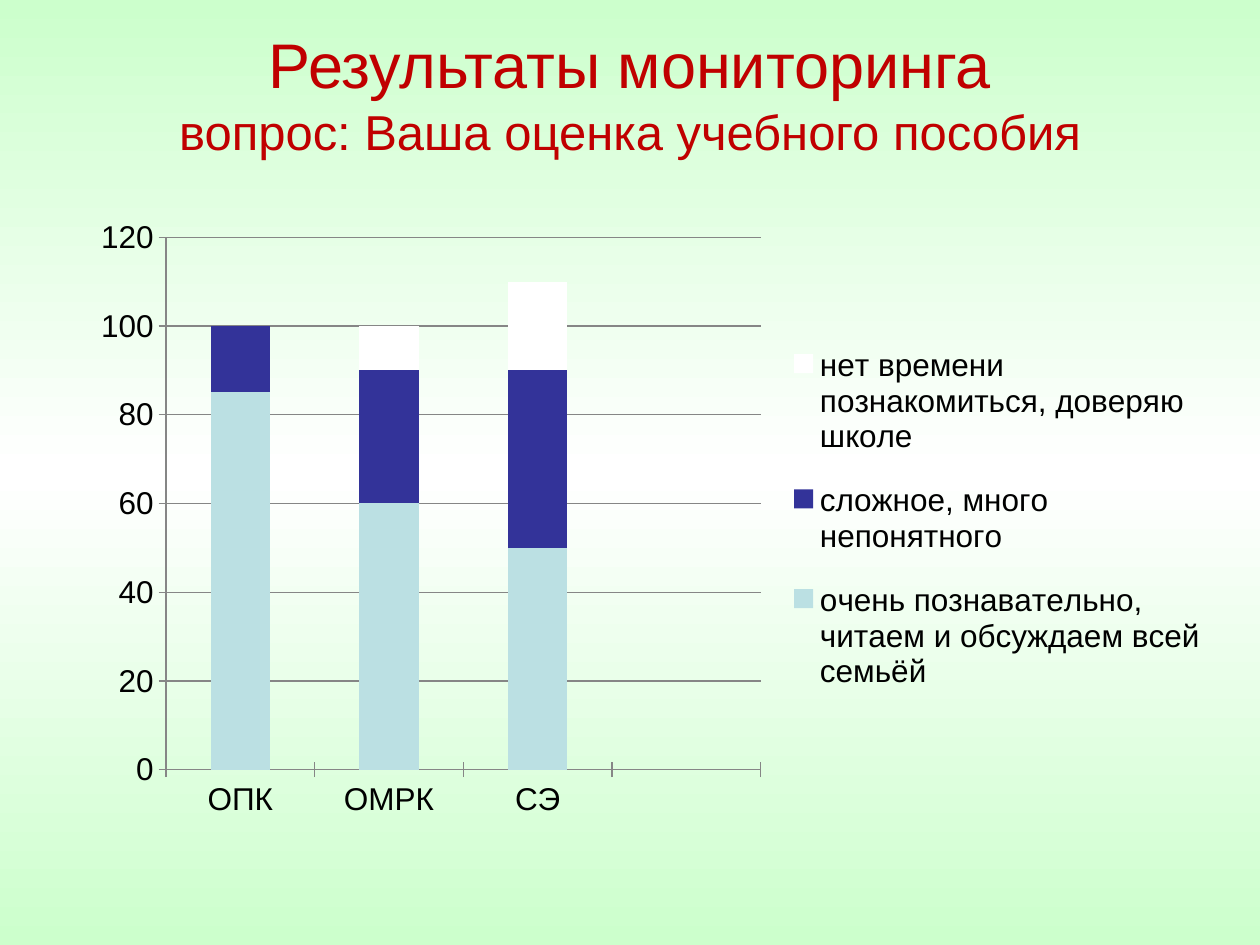
from copy import deepcopy

from lxml.etree import SubElement
from pptx import Presentation
from pptx.chart.data import CategoryChartData
from pptx.dml.color import RGBColor
from pptx.enum.chart import XL_CHART_TYPE, XL_LEGEND_POSITION, XL_TICK_MARK
from pptx.enum.text import MSO_ANCHOR, MSO_AUTO_SIZE, PP_ALIGN
from pptx.oxml.ns import qn
from pptx.util import Inches, Pt

FONT = "Arial"
CATEGORIES = ["ОПК", "ОМРК", "СЭ", ""]
SERIES = [
    ("очень познавательно, читаем и обсуждаем всей семьёй", (85, 60, 50, None), "BBE0E3"),
    ("сложное, много непонятного", (15, 30, 40, None), "333399"),
    ("нет времени познакомиться, доверяю школе", (0, 10, 20, None), "FFFFFF"),
]


def color(value):
    """Turn a hex string into a colour."""
    return RGBColor.from_string(value)


def format_font(font, size, value):
    """Set the typeface, size and colour of a font."""
    font.name = FONT
    font.size = Pt(size)
    font.color.rgb = color(value)


def set_background(slide, edge, middle):
    """Fill the background with a vertical gradient, lighter in the middle."""
    fill = slide.background.fill
    fill.gradient()
    fill.gradient_angle = 270
    first, last = fill.gradient_stops
    for stop, position in ((first, 0), (last, 0.5)):
        stop.position = position
    first.color.rgb = color(edge)
    last.color.rgb = color(middle)
    stops = slide._element.find(".//" + qn("a:gsLst"))
    end_stop = deepcopy(stops[0])
    end_stop.set("pos", "100000")
    stops.append(end_stop)


def set_title(slide, lines):
    """Write the title lines into the placeholder."""
    title = slide.shapes.title
    title.left, title.top = Inches(0.5), Inches(0.3)
    title.width, title.height = Inches(9), Inches(0.87)
    frame = title.text_frame
    frame.auto_size = MSO_AUTO_SIZE.NONE
    frame.vertical_anchor = MSO_ANCHOR.MIDDLE
    paragraph = frame.paragraphs[0]
    paragraph.text = "\v".join(text for text, size in lines)
    paragraph.alignment = PP_ALIGN.CENTER
    for run, (text, size) in zip(paragraph.runs, lines):
        format_font(run.font, size, "C00000")


def set_layout(element, index, box, inner=False):
    """Place a chart part by fractions of the chart area."""
    for old in element.findall(qn("c:layout")):
        element.remove(old)
    layout = SubElement(element, qn("c:layout"))
    element.insert(index, layout)
    manual = SubElement(layout, qn("c:manualLayout"))
    settings = [("layoutTarget", "inner")] if inner else []
    settings += [("xMode", "edge"), ("yMode", "edge"), *zip("xywh", box)]
    for name, value in settings:
        SubElement(manual, qn("c:" + name)).set("val", str(value))


def format_axis(axis):
    """Give an axis crossing ticks and a thin grey line."""
    axis.major_tick_mark = XL_TICK_MARK.CROSS
    axis.minor_tick_mark = XL_TICK_MARK.NONE
    axis.format.line.color.rgb = color("868686")
    axis.format.line.width = Pt(0.75)


def add_stacked_chart(slide):
    """Add the stacked columns of survey answers."""
    data = CategoryChartData()
    data.categories = CATEGORIES
    for name, values, fill in SERIES:
        data.add_series(name, values)
    chart = slide.shapes.add_chart(
        XL_CHART_TYPE.COLUMN_STACKED, Inches(0.62), Inches(1.64), Inches(9.06), Inches(4.95), data
    ).chart
    chart.has_title = False
    format_font(chart.font, 18, "000000")

    plot = chart.plots[0]
    plot.overlap = 100
    plot.gap_width = 150
    plot.vary_by_categories = False
    for series, (name, values, fill) in zip(plot.series, SERIES):
        series.format.fill.solid()
        series.format.fill.fore_color.rgb = color(fill)

    value_axis = chart.value_axis
    format_axis(chart.category_axis)
    format_axis(value_axis)
    value_axis.minimum_scale, value_axis.maximum_scale, value_axis.major_unit = 0, 120, 20
    value_axis.has_major_gridlines = True
    value_axis.major_gridlines.format.line.color.rgb = color("868686")
    value_axis.major_gridlines.format.line.width = Pt(0.75)

    chart.has_legend = True
    chart.legend.position = XL_LEGEND_POSITION.RIGHT
    chart.legend.include_in_layout = False
    plot_area = chart._chartSpace.find(".//" + qn("c:plotArea"))
    set_layout(plot_area, 0, (0.077, 0.049, 0.521, 0.854), inner=True)
    set_layout(chart.legend._element, 1, (0.62, 0.18, 0.37, 0.64))


def main():
    """Build and save the slide."""
    presentation = Presentation()
    presentation.slide_width, presentation.slide_height = Inches(10), Inches(7.5)
    slide = presentation.slides.add_slide(presentation.slide_layouts[5])
    set_background(slide, "CCFFCC", "FFFFFF")
    set_title(slide, [("Результаты мониторинга", 36), ("вопрос: Ваша оценка учебного пособия", 28)])
    add_stacked_chart(slide)
    presentation.save("out.pptx")


if __name__ == "__main__":
    main()
